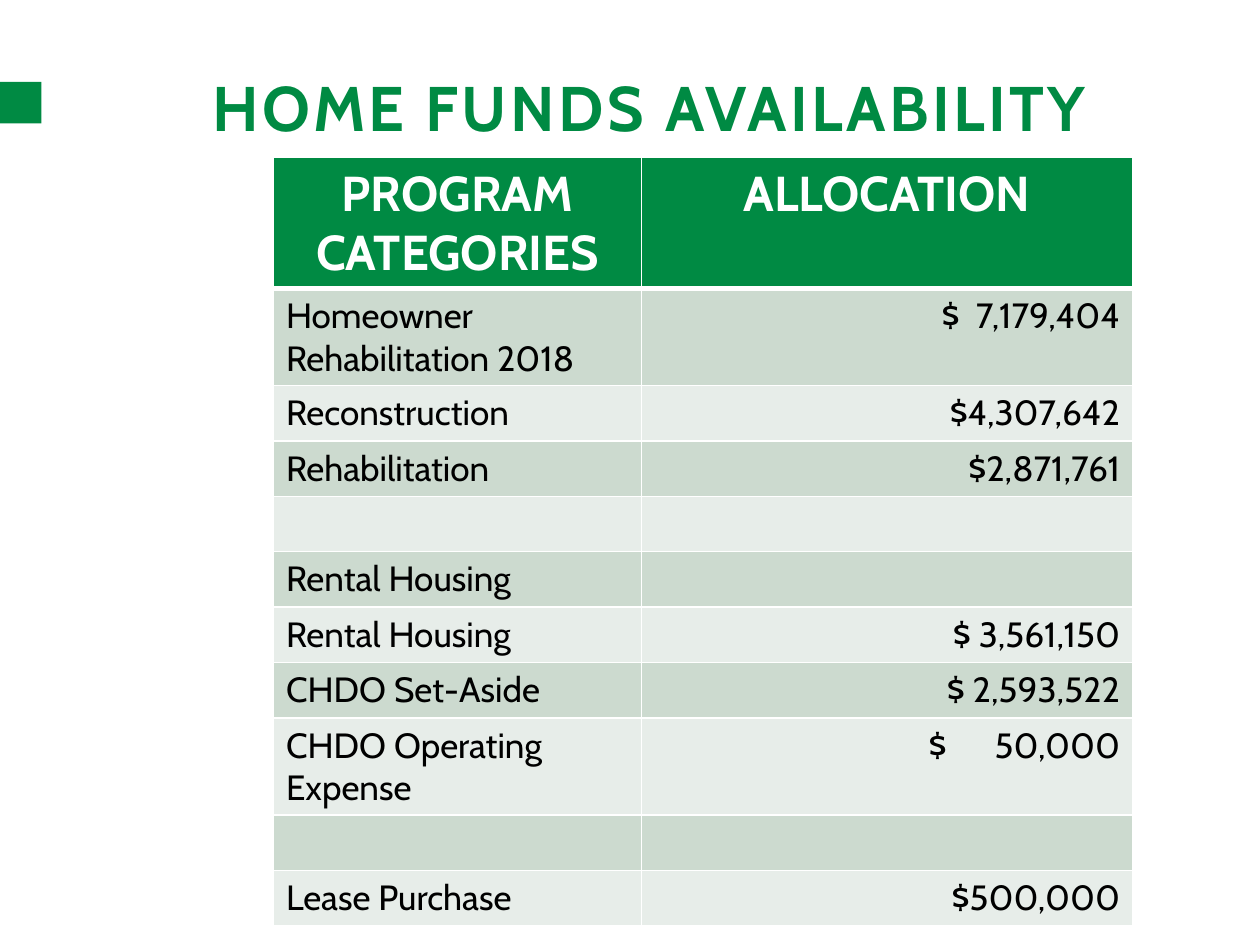
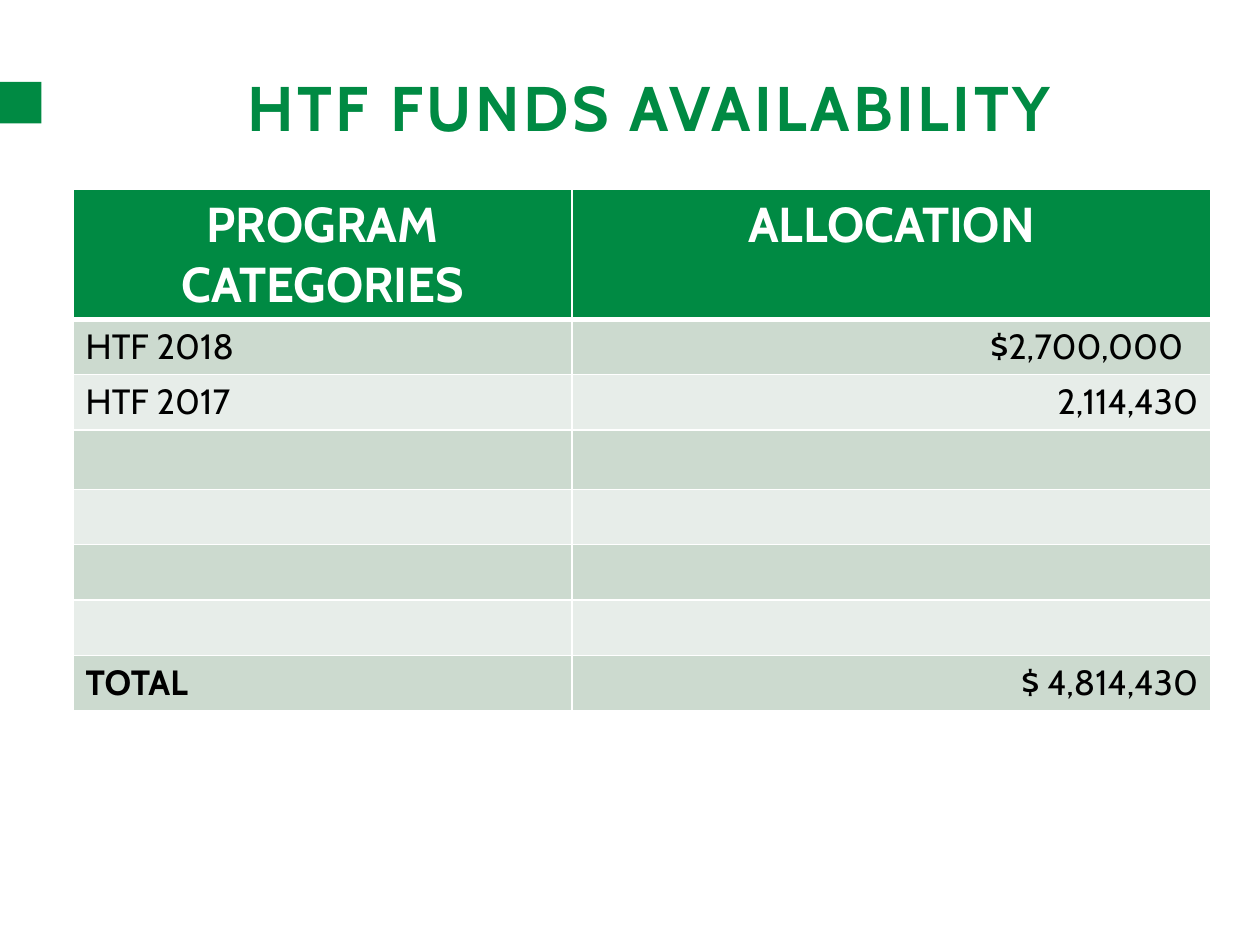
from dataclasses import dataclass

from lxml.etree import SubElement
from pptx import Presentation
from pptx.dml.color import RGBColor
from pptx.enum.shapes import MSO_SHAPE
from pptx.enum.text import MSO_ANCHOR, PP_ALIGN
from pptx.oxml import parse_xml
from pptx.oxml.ns import nsdecls, qn
from pptx.util import Inches, Pt


@dataclass(frozen=True)
class Theme:
    """Colours, font and type sizes shared by the slides."""
    green: str = "008A43"
    white: str = "FFFFFF"
    black: str = "000000"
    bands: tuple = ("CCDACF", "E7EDE9")
    font: str = "Cabin"
    title_size: int = 36
    header_size: int = 28
    body_size: int = 20
    title_spacing: int = 2
    thin: int = 1
    thick: int = 3


@dataclass(frozen=True)
class Entry:
    """Cell text with bold, extra gap after the currency sign and right indent."""
    text: str
    bold: bool = False
    gap: float = 0
    indent: float = 0


class Deck:
    """Holds the theme and the current slide and draws each kind of element."""

    def __init__(self, prs, theme):
        """Start with a presentation and a theme."""
        self.prs = prs
        self.theme = theme
        self.s = None

    def slide(self, title):
        """Add a slide with its title and green marker."""
        self.s = self.prs.slides.add_slide(self.prs.slide_layouts[6])
        self.title(title)
        self.marker()

    def style(self, r, size, color, bold, spacing=0):
        """Format one run."""
        r.font.name = self.theme.font
        r.font.size = Pt(size)
        r.font.bold = bold
        r.font.color.rgb = RGBColor.from_string(color)
        if spacing:
            r.font._element.set("spc", str(int(spacing * 100)))

    def title(self, text):
        """Add the centred, letter-spaced title."""
        t = self.theme
        sp = self.s.shapes.add_textbox(Inches(0.57), Inches(0.58), Inches(9.17), Inches(0.53))
        tf = sp.text_frame
        tf.word_wrap = True
        tf.vertical_anchor = MSO_ANCHOR.MIDDLE
        tf.text = text
        p = tf.paragraphs[0]
        p.alignment = PP_ALIGN.CENTER
        self.style(p.runs[0], t.title_size, t.green, True, t.title_spacing)

    def marker(self):
        """Add the green square at the left edge."""
        sp = self.s.shapes.add_shape(
            MSO_SHAPE.RECTANGLE, 0, Inches(0.65), Inches(0.33), Inches(0.33))
        sp.shadow.inherit = False
        sp.fill.solid()
        sp.fill.fore_color.rgb = RGBColor.from_string(self.theme.green)
        sp.line.fill.background()

    def borders(self, cell, top, bottom):
        """Draw white borders around a cell."""
        t = self.theme
        tc_pr = cell._tc.get_or_add_tcPr()
        sides = (("L", t.thin), ("R", t.thin), ("T", top), ("B", bottom))
        for i, (side, width) in enumerate(sides):
            ln = parse_xml(f'<a:ln{side} {nsdecls("a")} w="{Pt(width)}"/>')
            fill = SubElement(ln, qn("a:solidFill"))
            SubElement(fill, qn("a:srgbClr"), val=t.white)
            tc_pr.insert(i, ln)

    def cell(self, cell, entry, row, col):
        """Fill, border and write one table cell."""
        t = self.theme
        header = row == 0
        cell.fill.solid()
        cell.fill.fore_color.rgb = RGBColor.from_string(
            t.green if header else t.bands[(row - 1) % 2])
        self.borders(cell, t.thick if row == 1 else t.thin, t.thick if header else t.thin)
        cell.margin_right = Inches(0.1 + entry.indent)
        p = cell.text_frame.paragraphs[0]
        p.alignment = PP_ALIGN.CENTER if header else (PP_ALIGN.LEFT, PP_ALIGN.RIGHT)[col]
        size, color = (t.header_size, t.white) if header else (t.body_size, t.black)
        parts = entry.text.partition(" ") if entry.gap else (entry.text,)
        for part in filter(None, parts):
            r = p.add_run()
            r.text = part
            self.style(r, size, color, header or entry.bold, entry.gap if part == " " else 0)

    def table(self, left, top, widths, heights, rows):
        """Add a banded table under the shared header row."""
        rows = [("PROGRAM CATEGORIES", "ALLOCATION"), *rows]
        frame = self.s.shapes.add_table(
            len(rows), len(widths), Inches(left), Inches(top),
            Inches(sum(widths)), Inches(sum(heights)))
        table = frame.table
        table.first_row = table.horz_banding = False
        for column, width in zip(table.columns, widths):
            column.width = Inches(width)
        for i, (entries, height) in enumerate(zip(rows, heights)):
            table.rows[i].height = Inches(height)
            for j, entry in enumerate(entries):
                entry = entry if isinstance(entry, Entry) else Entry(entry)
                self.cell(table.cell(i, j), entry, i, j)


def main():
    """Build and save both slides."""
    prs = Presentation()
    prs.slide_width, prs.slide_height = Inches(10), Inches(7.5)
    deck = Deck(prs, Theme())
    line, two_lines = 0.44, 0.77
    blank = ("", "")

    deck.slide("HOME FUNDS AVAILABILITY")
    home_rows = [
        ("Homeowner Rehabilitation 2018", Entry("$ 7,179,404", gap=4.7)),
        ("Reconstruction", "$4,307,642"),
        ("Rehabilitation", "$2,871,761"),
        blank,
        ("Rental Housing", ""),
        ("Rental Housing", "$ 3,561,150"),
        ("CHDO Set-Aside", "$ 2,593,522"),
        ("CHDO Operating Expense", Entry("$ 50,000", gap=23)),
        blank,
        ("Lease Purchase", "$500,000"),
    ]
    home_heights = [1.04, two_lines, *[line] * 6, two_lines, *[line] * 2]
    deck.table(2.17, 1.25, (2.92, 3.9), home_heights, home_rows)

    deck.slide("HTF FUNDS AVAILABILITY")
    htf_rows = [
        ("HTF 2018", Entry("$2,700,000", indent=0.12)),
        ("HTF 2017", "2,114,430"),
        *[blank] * 4,
        (Entry("TOTAL", bold=True), "$ 4,814,430"),
    ]
    htf_heights = [1.03, line, line, 0.47, *[line] * 4]
    deck.table(0.58, 1.5, (3.96, 5.07), htf_heights, htf_rows)

    prs.save("out.pptx")


if __name__ == "__main__":
    main()
